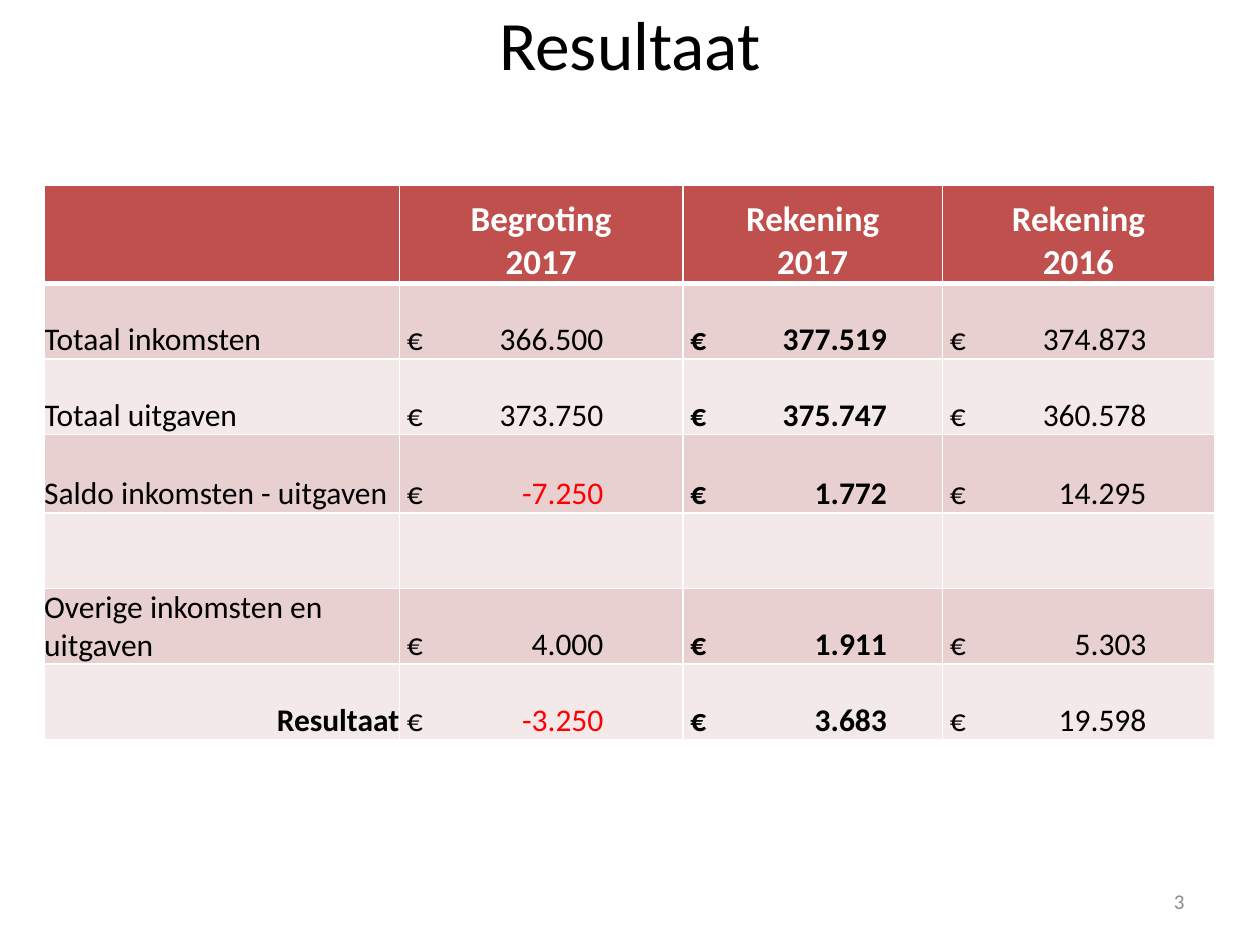
from typing import NamedTuple

from lxml.etree import SubElement
from pptx import Presentation
from pptx.dml.color import RGBColor
from pptx.enum.text import MSO_ANCHOR as Anchor, PP_ALIGN as Align
from pptx.oxml.ns import qn
from pptx.util import Inches, Pt

BLACK, WHITE, RED, GREY = "000000", "FFFFFF", "FF0000", "8C8C8C"
HEADER_FILL = "C0504D"
BAND_FILLS = ("E8D0D0", "F4E9E9")
COLUMN_WIDTHS = (2.82, 2.25, 2.06, 2.16)
ROW_HEIGHTS = (0.78, 0.6, 0.6, 0.62, 0.6, 0.6, 0.6)
HEADERS = ("", "Begroting\n2017", "Rekening\n2017", "Rekening\n2016")
CURRENCY_INDENT = 0.06
AMOUNT_TAB = 1.56


class ResultRow(NamedTuple):
    label: str
    amounts: tuple[str, str, str] = ("", "", "")
    is_total: bool = False


RESULT_ROWS = (
    ResultRow("Totaal inkomsten", ("366.500", "377.519", "374.873")),
    ResultRow("Totaal uitgaven", ("373.750", "375.747", "360.578")),
    ResultRow("Saldo inkomsten - uitgaven", ("-7.250", "1.772", "14.295")),
    ResultRow(""),
    ResultRow("Overige inkomsten en uitgaven", ("4.000", "1.911", "5.303")),
    ResultRow("Resultaat", ("-3.250", "3.683", "19.598"), is_total=True),
)


def color(value: str) -> RGBColor:
    return RGBColor.from_string(value)


def add_run(paragraph, text: str, *, size: float = 18, fill: str = BLACK,
            bold: bool = False) -> None:
    run = paragraph.add_run()
    run.text = text
    run.font.name = "Calibri"
    run.font.size = Pt(size)
    run.font.bold = bold
    run.font.color.rgb = color(fill)


def write_text(text_frame, text: str, *, align=Align.LEFT, **font) -> None:
    for index, line in enumerate(text.split("\n")):
        paragraph = text_frame.add_paragraph() if index else text_frame.paragraphs[0]
        paragraph.alignment = align
        add_run(paragraph, line, **font)


def write_amount(cell, amount: str, bold: bool) -> None:
    cell.margin_left = Inches(CURRENCY_INDENT)
    paragraph = cell.text_frame.paragraphs[0]
    tabs = SubElement(paragraph._p.get_or_add_pPr(), qn("a:tabLst"))
    SubElement(tabs, qn("a:tab"), pos=str(Inches(AMOUNT_TAB)), algn="r")
    add_run(paragraph, "€\t", bold=bold)
    add_run(paragraph, amount, bold=bold, fill=RED if amount.startswith("-") else BLACK)


def add_text_box(slide, text: str, left: float, top: float, width: float,
                 height: float, **text_format) -> None:
    shape = slide.shapes.add_textbox(Inches(left), Inches(top), Inches(width), Inches(height))
    text_frame = shape.text_frame
    text_frame.word_wrap = True
    text_frame.vertical_anchor = Anchor.MIDDLE
    text_frame.margin_top = text_frame.margin_bottom = 0
    write_text(text_frame, text, **text_format)


def style_cell(cell, fill: str, top: float = 1, bottom: float = 1) -> None:
    properties = cell._tc.get_or_add_tcPr()
    for side, width in (("L", 1), ("R", 1), ("T", top), ("B", bottom)):
        line = SubElement(properties, qn(f"a:ln{side}"), w=str(Pt(width)))
        line_fill = SubElement(line, qn("a:solidFill"))
        SubElement(line_fill, qn("a:srgbClr"), val=WHITE)
    cell.fill.solid()
    cell.fill.fore_color.rgb = color(fill)
    cell.vertical_anchor = Anchor.BOTTOM
    cell.margin_left = cell.margin_right = cell.margin_top = cell.margin_bottom = 0


def add_result_table(slide) -> None:
    table = slide.shapes.add_table(
        len(ROW_HEIGHTS), len(COLUMN_WIDTHS), Inches(0.35), Inches(1.47),
        Inches(sum(COLUMN_WIDTHS)), Inches(sum(ROW_HEIGHTS))).table
    for column, width in zip(table.columns, COLUMN_WIDTHS):
        column.width = Inches(width)
    for row, height in zip(table.rows, ROW_HEIGHTS):
        row.height = Inches(height)

    for cell, header in zip(table.rows[0].cells, HEADERS):
        style_cell(cell, HEADER_FILL, bottom=3)
        if header:
            write_text(cell.text_frame, header, align=Align.CENTER,
                       size=20, fill=WHITE, bold=True)

    for row_index, result in enumerate(RESULT_ROWS, start=1):
        for cell in table.rows[row_index].cells:
            style_cell(cell, BAND_FILLS[(row_index - 1) % 2], top=3 if row_index == 1 else 1)
        if result.label:
            write_text(table.cell(row_index, 0).text_frame, result.label,
                       align=Align.RIGHT if result.is_total else Align.LEFT,
                       bold=result.is_total)
        for column_index, amount in enumerate(result.amounts, start=1):
            if amount:
                write_amount(table.cell(row_index, column_index), amount,
                             bold=column_index == 2)


def main() -> None:
    presentation = Presentation()
    presentation.slide_width = Inches(10)
    presentation.slide_height = Inches(7.5)
    slide = presentation.slides.add_slide(presentation.slide_layouts[6])
    add_text_box(slide, "Resultaat", 0.5, 0, 9, 0.68, align=Align.CENTER, size=39.6)
    add_result_table(slide)
    add_text_box(slide, "3", 7.17, 6.95, 2.33, 0.4, align=Align.RIGHT, size=12, fill=GREY)
    presentation.save("out.pptx")


if __name__ == "__main__":
    main()
